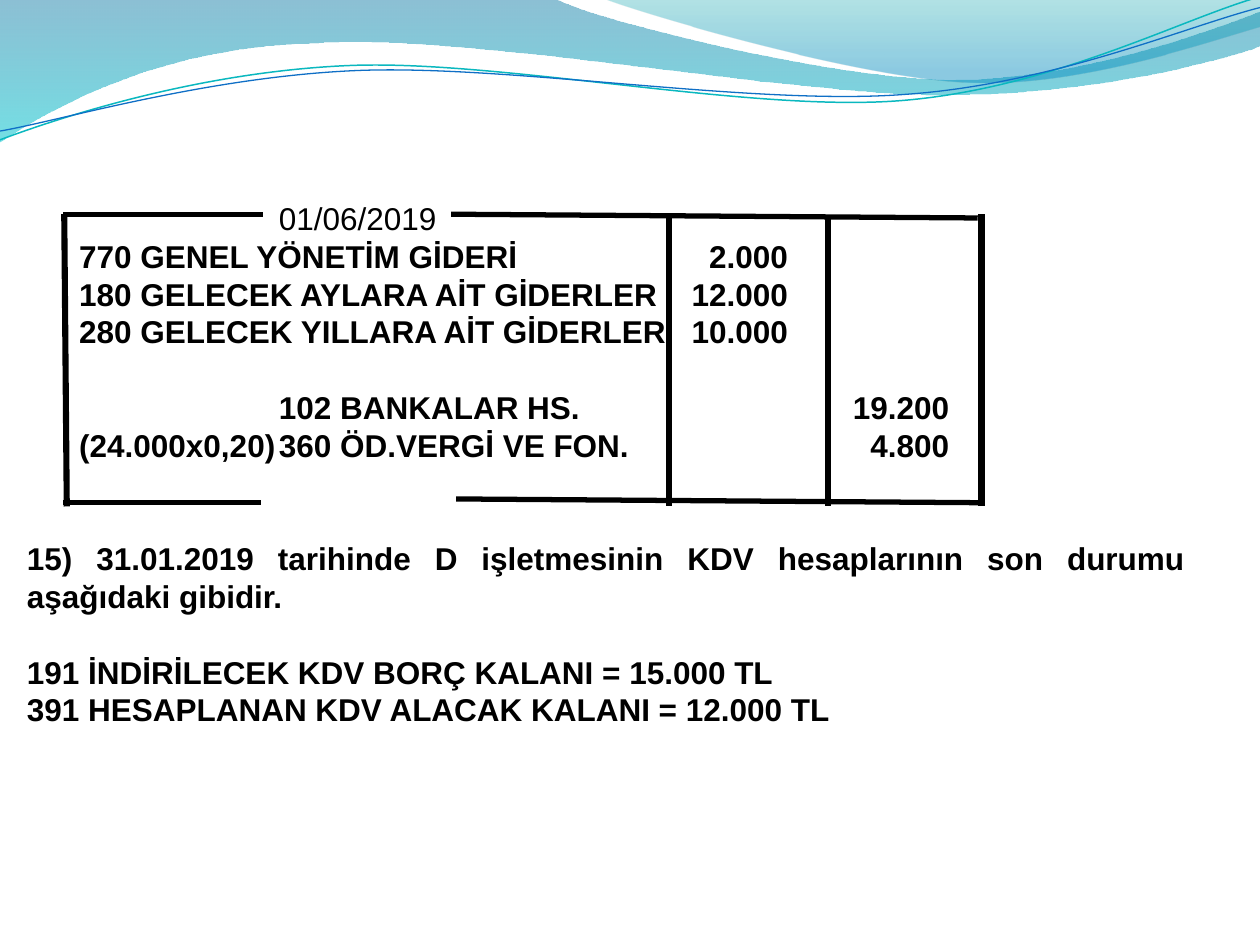
from dataclasses import dataclass
from math import cos, radians, sin

from lxml import etree
from pptx import Presentation
from pptx.dml.color import RGBColor
from pptx.enum.shapes import MSO_CONNECTOR
from pptx.enum.text import PP_ALIGN
from pptx.oxml.ns import qn
from pptx.slide import Slide
from pptx.util import Inches, Pt

STRAIGHT = MSO_CONNECTOR.STRAIGHT
JUSTIFY = PP_ALIGN.JUSTIFY

BLACK = RGBColor(0x00, 0x00, 0x00)
DEEP_BLUE = RGBColor(0x00, 0x74, 0xA1)
AQUA = RGBColor(0x00, 0xC6, 0xCF)
TEAL = RGBColor(0x00, 0xA1, 0xA9)
SKY_BLUE = RGBColor(0x00, 0x8B, 0xBF)
LINE_TEAL = RGBColor(0x0A, 0xB8, 0xBF)
LINE_BLUE = RGBColor(0x0F, 0x6F, 0xC6)

COLUMNS, ROWS = 100, 75
CELL = Inches(10) // COLUMNS
ROW_PITCH = 21.6
TILT = 2.7

Point = tuple[float, float]


@dataclass(frozen=True)
class Stop:
    """A gradient stop with its share of the way and its opacity."""
    position: float
    color: RGBColor
    opacity: float


@dataclass(frozen=True)
class Band:
    """A closed gradient outline of straight (one point) and cubic (three points) segments."""
    start: Point
    segments: list[list[Point]]
    stops: tuple[Stop, Stop]


@dataclass(frozen=True)
class Strand:
    """A thin open curve, tilted around its center."""
    start: Point
    segments: list[list[Point]]
    center: Point
    color: RGBColor
    width: float


@dataclass(frozen=True)
class Rule:
    """A ledger rule between two grid points."""
    start: Point
    end: Point
    width: float


@dataclass(frozen=True)
class Entry:
    """A text row with the number of empty rows above it."""
    text: str
    gap: int = 0
    bold: bool = True


BANDS = [
    Band((0, 0), [
        [(44, -0.1)],
        [(47.6, 1.7), (66.4, 6.3), (75.8, 6.3)],
        [(85.3, 6.3), (95.8, 2.6), (100, 0.9)],
        [(100.1, 3.6)],
        [(98.3, 4.4), (87, 7.6), (74.6, 7.5)],
        [(62.2, 7.5), (38.2, 2.8), (25.7, 3.4)],
        [(12.9, 3.6), (4.6, 8.3), (-0.1, 11.3)],
        [(0, 0)],
    ], (Stop(0, DEEP_BLUE, 0.45), Stop(1, AQUA, 0.55))),
    Band((47.9, -0.1), [
        [(50.9, 1.1), (68.2, 6.2), (76.9, 6.5)],
        [(85.6, 6.9), (96.1, 3.2), (100, 2.1)],
        [(100, 0)],
        [(47.9, -0.1)],
    ], (Stop(0, TEAL, 0.3), Stop(0.8, SKY_BLUE, 0.45))),
]
STRANDS = [
    Strand((0, 11.1), [
        [(4.8, 9.3), (15.8, 5.7), (27.7, 5.2)],
        [(39.5, 4.7), (59.3, 8.9), (71.3, 8)],
        [(83.3, 7.1), (93.8, 1.5), (99.8, -0.2)],
    ], (49.9, 5.75), LINE_TEAL, 0.85),
    Strand((0, 10.4), [
        [(4.7, 9.6), (16.4, 6.1), (28.3, 5.6)],
        [(40.3, 5.1), (59.7, 8.4), (71.7, 7.5)],
        [(83.6, 6.7), (94.1, 2.1), (100, 0.6)],
    ], (49.95, 5.9), LINE_BLUE, 0.75),
]

TOP, BOTTOM = 17, 40.2
RULES = [
    Rule((5, TOP), (20.9, TOP), 3),
    Rule((35.8, TOP), (77.6, 17.3), 3),
    Rule((53.1, TOP), (53.1, BOTTOM), 3.5),
    Rule((65.7, 17.1), (65.7, BOTTOM), 3.5),
    Rule((77.9, TOP), (77.9, BOTTOM), 3.5),
    Rule((5.1, TOP), (5.3, BOTTOM), 3.5),
    Rule((5, 39.9), (20.7, 39.9), 3),
    Rule((36.2, 39.6), (77.9, 39.9), 3),
]

TAB_STOPS = [(4.15, "l"), (20, "l"), (60.4, "r"), (73.2, "r")]
ENTRIES = [
    Entry("\t\t01/06/2019", bold=False),
    Entry("\t770 GENEL YÖNETİM GİDERİ\t2.000"),
    Entry("\t180 GELECEK AYLARA AİT GİDERLER\t12.000"),
    Entry("\t280 GELECEK YILLARA AİT GİDERLER\t10.000"),
    Entry("\t\t102 BANKALAR HS.\t\t19.200", gap=1),
    Entry("\t(24.000x0,20)\t360 ÖD.VERGİ VE FON.\t\t4.800"),
    Entry("15) 31.01.2019 tarihinde D işletmesinin KDV hesaplarının son durumu "
          "aşağıdaki gibidir.", gap=2),
    Entry("191 İNDİRİLECEK KDV BORÇ KALANI = 15.000 TL", gap=1),
    Entry("391 HESAPLANAN KDV ALACAK KALANI = 12.000 TL"),
]


def cells(count: float) -> int:
    """Turn a number of grid cells into a length."""
    return round(count * CELL)


def turn(point: Point, center: Point) -> Point:
    """Turn a point clockwise around a center by the tilt."""
    x, y = point[0] - center[0], point[1] - center[1]
    cosine, sine = cos(radians(TILT)), sin(radians(TILT))
    return center[0] + x * cosine - y * sine, center[1] + x * sine + y * cosine


def add_curve(slide: Slide, start: Point, segments: list[list[Point]], close: bool):
    """Add a freeform whose three-point segments are cubic curves."""
    builder = slide.shapes.build_freeform(*map(cells, start))
    builder.add_line_segments(
        [(cells(x), cells(y)) for segment in segments for x, y in segment], close=close)
    shape = builder.convert_to_shape()
    shape.shadow.inherit = False
    steps = iter(list(shape.element.iter(qn("a:lnTo"))))
    for segment in segments:
        group = [next(steps) for _ in segment]
        if len(group) == 3:
            curve = etree.Element(qn("a:cubicBezTo"))
            group[0].addprevious(curve)
            for step in group:
                curve.append(step[0])
                step.getparent().remove(step)
    return shape


def draw_band(slide: Slide, band: Band) -> None:
    """Draw a translucent gradient band."""
    shape = add_curve(slide, band.start, band.segments, close=True)
    shape.line.fill.background()
    shape.fill.gradient()
    shape.fill.gradient_angle = 270
    for gradient_stop, stop in zip(shape.fill.gradient_stops, band.stops):
        gradient_stop.position = stop.position
        gradient_stop.color.rgb = stop.color
    for color, stop in zip(shape.element.iter(qn("a:srgbClr")), band.stops):
        etree.SubElement(color, qn("a:alpha"), val=str(round(stop.opacity * 100000)))


def draw_strand(slide: Slide, strand: Strand) -> None:
    """Draw a thin tilted curve."""
    segments = [[turn(point, strand.center) for point in segment]
                for segment in strand.segments]
    shape = add_curve(slide, turn(strand.start, strand.center), segments, close=False)
    shape.rotation = 360 - TILT
    shape.fill.background()
    shape.line.color.rgb = strand.color
    shape.line.width = Pt(strand.width)


def draw_rule(slide: Slide, rule: Rule) -> None:
    """Draw one black ledger rule."""
    connector = slide.shapes.add_connector(
        STRAIGHT, *map(cells, (*rule.start, *rule.end)))
    connector.line.color.rgb = BLACK
    connector.line.width = Pt(rule.width)
    etree.SubElement(connector.element.spPr, qn("a:effectLst"))


def write_entries(slide: Slide, entries: list[Entry]) -> None:
    """Write the ledger rows and the question in one tabbed text box."""
    text_box = slide.shapes.add_textbox(*map(cells, (1.15, 12.3, 93.9, 46.4)))
    frame = text_box.text_frame
    frame.word_wrap = True
    frame.margin_top = cells(3.5)
    for index, entry in enumerate(entries):
        paragraph = frame.add_paragraph() if index else frame.paragraphs[0]
        paragraph.text = entry.text
        paragraph.alignment = JUSTIFY
        paragraph.line_spacing = Pt(ROW_PITCH)
        paragraph.space_before = Pt(ROW_PITCH * entry.gap)
        font = paragraph.font
        font.name, font.size, font.bold = "Arial", Pt(18), entry.bold
        font.color.rgb = BLACK
        if "\t" in entry.text:
            tab_list = etree.Element(qn("a:tabLst"))
            for position, side in TAB_STOPS:
                etree.SubElement(tab_list, qn("a:tab"), pos=str(cells(position)), algn=side)
            paragraph._p.pPr.find(qn("a:defRPr")).addprevious(tab_list)


def main() -> None:
    """Build the ledger slide."""
    presentation = Presentation()
    presentation.slide_width, presentation.slide_height = COLUMNS * CELL, ROWS * CELL
    slide = presentation.slides.add_slide(presentation.slide_layouts[6])
    for band in BANDS:
        draw_band(slide, band)
    for strand in STRANDS:
        draw_strand(slide, strand)
    write_entries(slide, ENTRIES)
    for rule in RULES:
        draw_rule(slide, rule)
    presentation.save("out.pptx")


if __name__ == "__main__":
    main()
